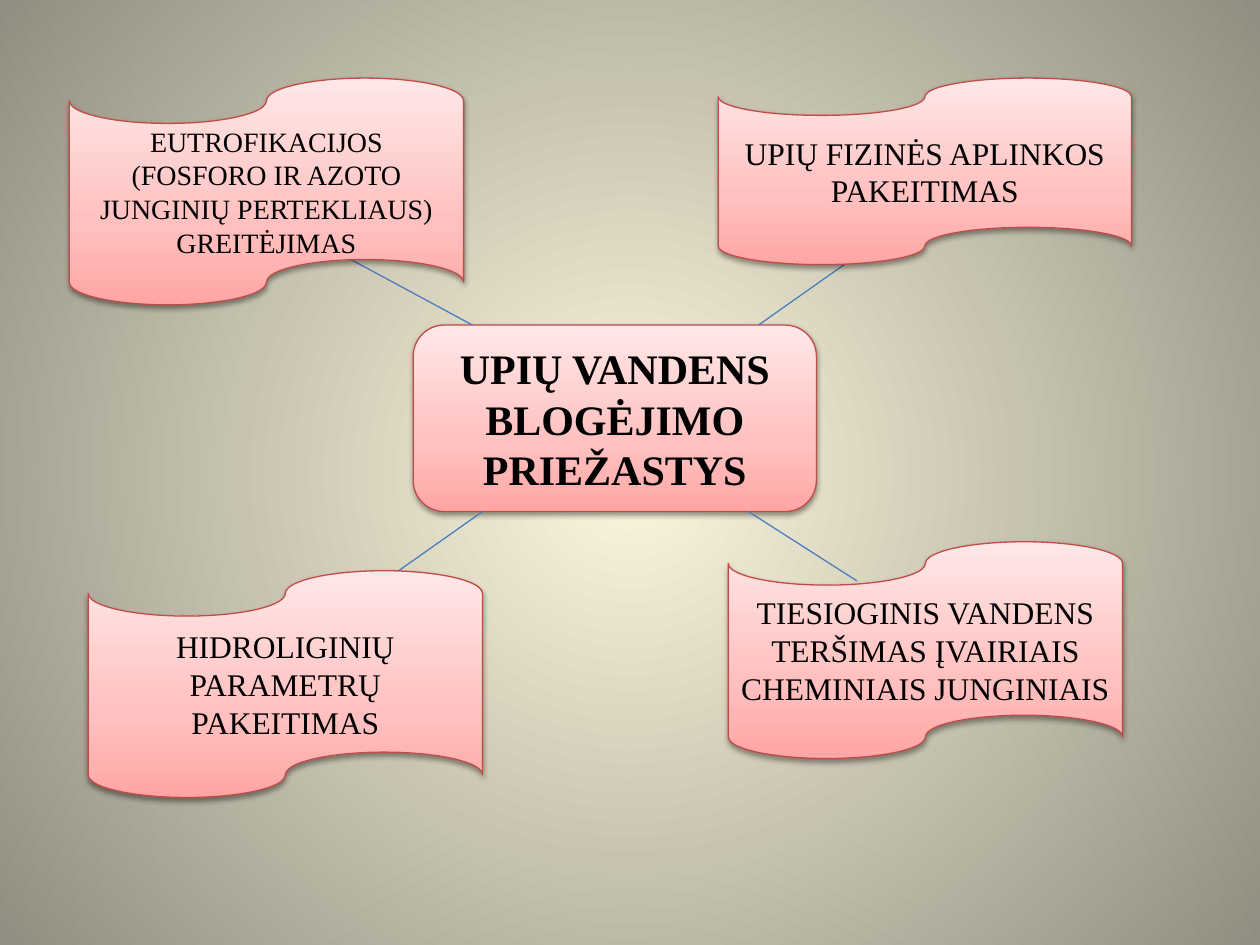
import dataclasses
import typing

import lxml.etree
import pptx
import pptx.dml.color
import pptx.enum.shapes
import pptx.enum.text
import pptx.oxml
import pptx.oxml.ns
import pptx.util

Pt = pptx.util.Pt
Kind = pptx.enum.shapes.MSO_SHAPE
Stops = list[tuple[int, str]]

FONT = "Times New Roman"
PINK: Stops = [(0, "FFA6A5"), (35, "FFC0BF"), (100, "FFE7E7")]
SAND: Stops = [(0, "FCF7DD"), (100, "918E81")]
UPWARD = '<a:lin {ns} ang="16200000" scaled="0"/>'
RADIAL = (
    '<a:path {ns} path="circle">'
    '<a:fillToRect l="50000" t="50000" r="50000" b="50000"/></a:path>'
)
SHADOW = (
    '<a:outerShdw {ns} blurRad="40000" dist="20000" dir="5400000" rotWithShape="0">'
    '<a:srgbClr val="000000"><a:alpha val="38000"/></a:srgbClr></a:outerShdw>'
)


@dataclasses.dataclass
class Box:
    text: str
    left: float
    top: float
    width: float
    height: float
    size: int = 18
    bold: bool = False
    kind: typing.Any = Kind.FLOWCHART_PUNCHED_TAPE


@dataclasses.dataclass
class Link:
    x: float
    y: float
    end_x: float
    end_y: float


HUB = Box("UPIŲ VANDENS BLOGĖJIMO PRIEŽASTYS", 236.16, 185.76, 230.4, 106.56,
          24, True, Kind.ROUNDED_RECTANGLE)
ROOF, FLOOR = HUB.top, HUB.top + HUB.height
RISE = 39.6
LINKS = [
    Link(270, ROOF, 196.56, ROOF - RISE),
    Link(433.44, ROOF, 489.6, ROOF - RISE),
    Link(275.76, FLOOR, 219.6, FLOOR + RISE),
    Link(427.68, FLOOR, 489.6, FLOOR + RISE),
]
TAPES = [
    Box("EUTROFIKACIJOS (FOSFORO IR AZOTO JUNGINIŲ PERTEKLIAUS) GREITĖJIMAS",
        39.6, 44.64, 225.36, 129.6, 16),
    Box("UPIŲ FIZINĖS APLINKOS PAKEITIMAS", 410.4, 44.64, 236.16, 106.56),
    Box("HIDROLIGINIŲ PARAMETRŲ PAKEITIMAS", 50.4, 326.16, 225.36, 129.6),
    Box("TIESIOGINIS VANDENS TERŠIMAS ĮVAIRIAIS CHEMINIAIS JUNGINIAIS",
        416.16, 309.6, 225.36, 123.84),
]


def shade(code: str) -> pptx.dml.color.RGBColor:
    return pptx.dml.color.RGBColor.from_string(code)


def node(xml: str) -> typing.Any:
    return pptx.oxml.parse_xml(xml.format(ns=pptx.oxml.ns.nsdecls("a")))


def blend(fill: typing.Any, root: typing.Any, stops: Stops, flow: str) -> None:
    fill.gradient()
    grad = root.find(".//" + pptx.oxml.ns.qn("a:gradFill"))
    for child in list(grad):
        grad.remove(child)
    marks = "".join(
        f'<a:gs pos="{spot * 1000}"><a:srgbClr val="{code}"/></a:gs>'
        for spot, code in stops
    )
    grad.append(node("<a:gsLst {ns}>" + marks + "</a:gsLst>"))
    grad.append(node(flow))


def stroke(line: typing.Any, code: str) -> None:
    line.color.rgb = shade(code)
    line.width = Pt(0.75)


def draw_box(slide: typing.Any, box: Box) -> None:
    shape = slide.shapes.add_shape(
        box.kind, Pt(box.left), Pt(box.top), Pt(box.width), Pt(box.height))
    props = shape._element.spPr
    blend(shape.fill, props, PINK, UPWARD)
    stroke(shape.line, "BF4C48")
    shape.shadow.inherit = False
    props.find(pptx.oxml.ns.qn("a:effectLst")).append(node(SHADOW))
    frame = shape.text_frame
    frame.word_wrap = True
    frame.vertical_anchor = pptx.enum.text.MSO_ANCHOR.MIDDLE
    para = frame.paragraphs[0]
    para.alignment = pptx.enum.text.PP_ALIGN.CENTER
    run = para.add_run()
    run.text = box.text
    run.font.name = FONT
    run.font.size = Pt(box.size)
    run.font.bold = box.bold
    run.font.color.rgb = shade("000000")


def draw_link(slide: typing.Any, link: Link) -> None:
    line = slide.shapes.add_connector(
        pptx.enum.shapes.MSO_CONNECTOR.STRAIGHT,
        Pt(link.x), Pt(link.y), Pt(link.end_x), Pt(link.end_y))
    stroke(line.line, "4B7EBC")
    lxml.etree.SubElement(line._element.spPr, pptx.oxml.ns.qn("a:effectLst"))


def main() -> None:
    deck = pptx.Presentation()
    deck.slide_width, deck.slide_height = Pt(720), Pt(540)
    slide = deck.slides.add_slide(deck.slide_layouts[6])
    blend(slide.background.fill, slide._element, SAND, RADIAL)
    draw_box(slide, HUB)
    for link in LINKS:
        draw_link(slide, link)
    for tape in TAPES:
        draw_box(slide, tape)
    deck.save("out.pptx")


if __name__ == "__main__":
    main()
